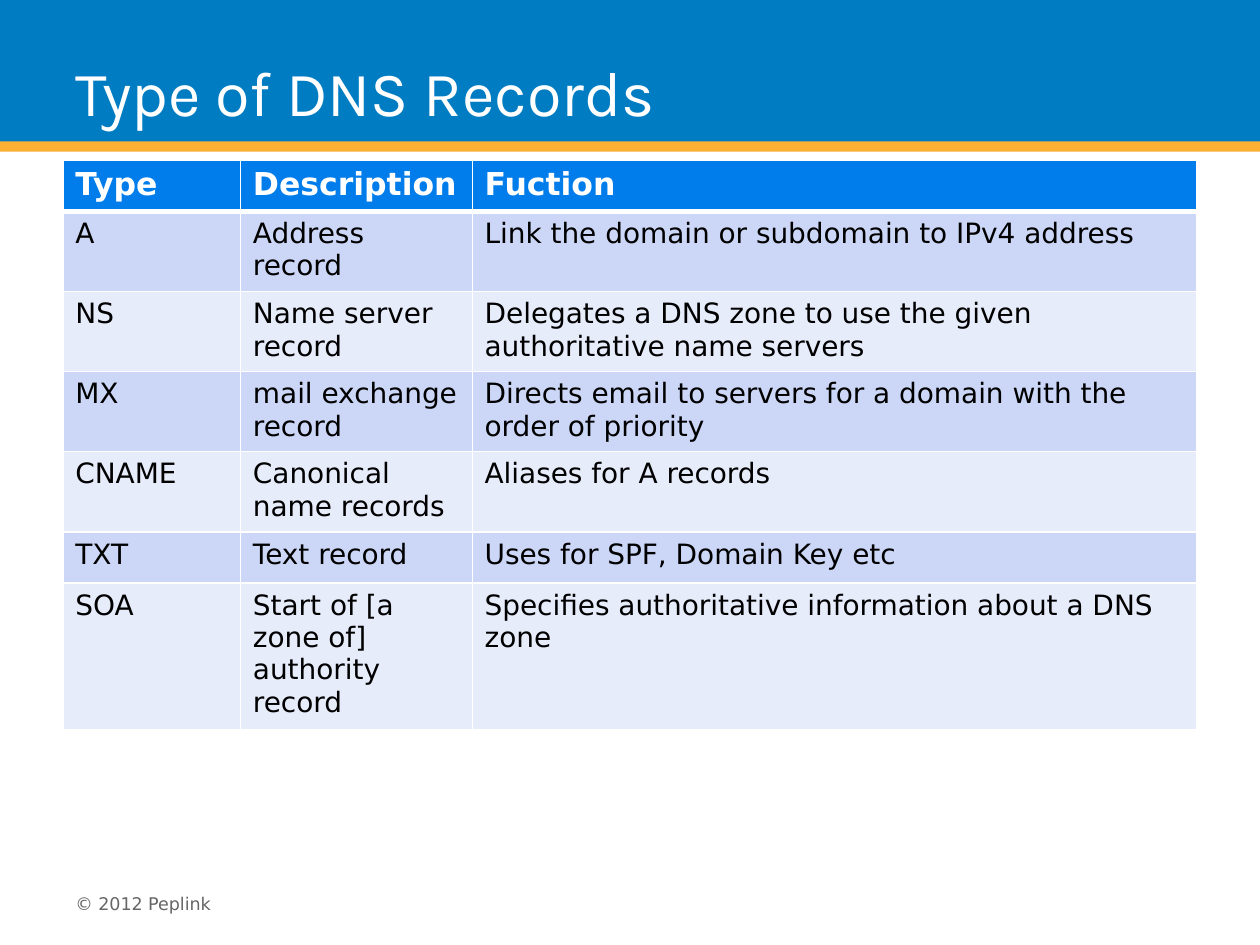
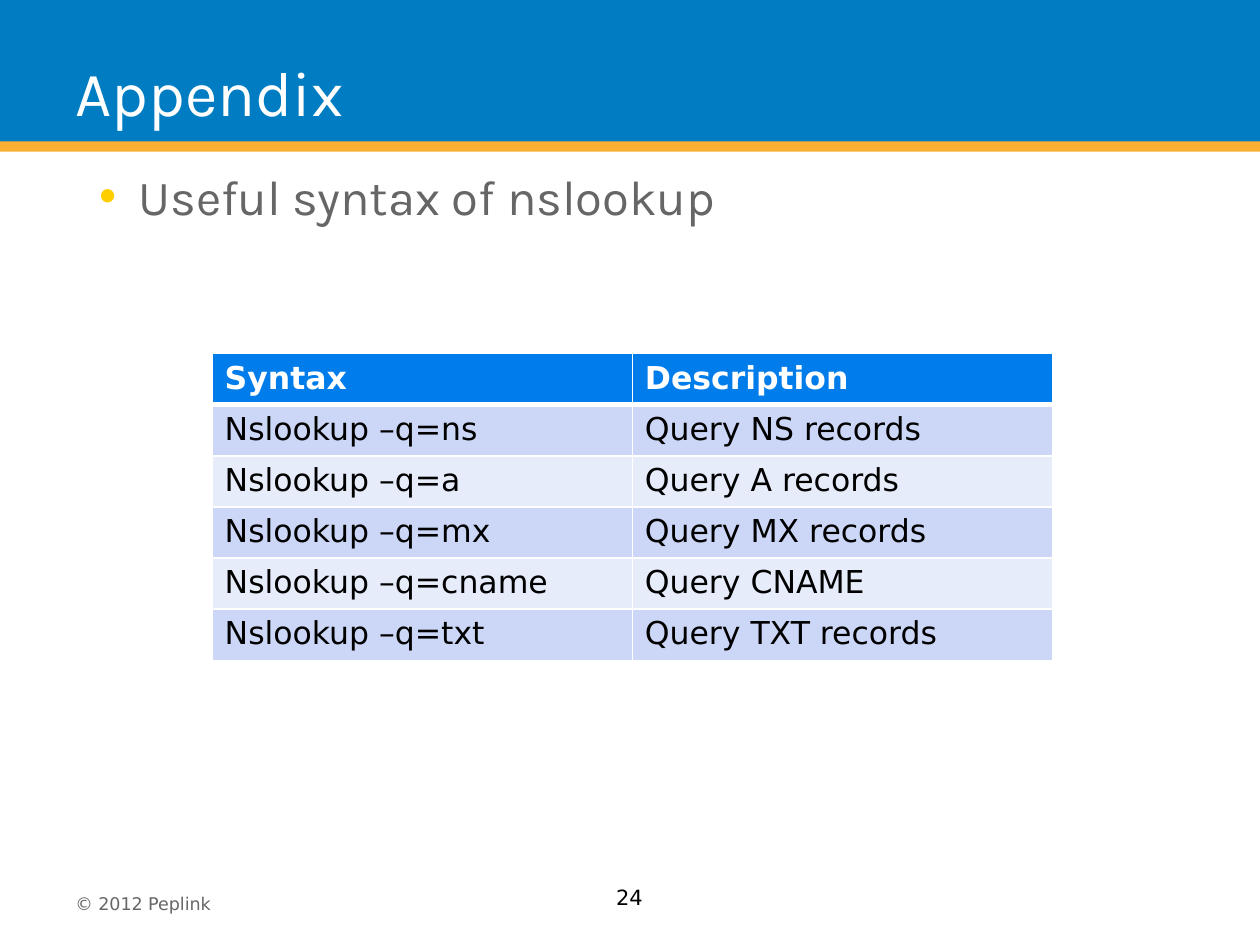
from lxml import etree
from pptx import Presentation
from pptx.dml.color import RGBColor
from pptx.enum.shapes import MSO_SHAPE
from pptx.enum.text import MSO_ANCHOR, MSO_AUTO_SIZE, PP_ALIGN
from pptx.oxml.ns import qn
from pptx.util import Cm, Pt

RECT = MSO_SHAPE.RECTANGLE
BOTTOM, MIDDLE, TOP = MSO_ANCHOR.BOTTOM, MSO_ANCHOR.MIDDLE, MSO_ANCHOR.TOP
LEFT, CENTER = PP_ALIGN.LEFT, PP_ALIGN.CENTER
NOFIT = MSO_AUTO_SIZE.NONE

# Shared look
BLUE, GOLD, GREY = "007DC2", "FBB034", "666666"
WHITE, BLACK, DOT = "FFFFFF", "000000", "FFCE00"
HEAD, BANDS = "007DEA", ["E7ECFB", "CCD7F7"]
SANS, KARLA = "DejaVu Sans", "Karla"

# Content
PAGES = [
    dict(title="Type of DNS Records", layout=5, left=1.27, top=3.23,
         cols=[3.58, 4.67, 14.61], size=16, rows=[
             ("Type", "Description", "Fuction"),
             ("A", "Address record",
              "Link the domain or subdomain to IPv4 address"),
             ("NS", "Name server record",
              "Delegates a DNS zone to use the given authoritative name servers"),
             ("MX", "mail exchange record",
              "Directs email to servers for a domain with the order of priority"),
             ("CNAME", "Canonical name records", "Aliases for A records"),
             ("TXT", "Text record", "Uses for SPF, Domain Key etc"),
             ("SOA", "Start of [a zone of] authority record",
              "Specifies authoritative information about a DNS zone"),
         ]),
    dict(title="Appendix", layout=1, left=4.28, top=7.13,
         cols=[8.47, 8.47], size=18, list="Useful syntax of nslookup",
         number="24", rows=[
             ("Syntax", "Description"),
             ("Nslookup –q=ns", "Query NS records"),
             ("Nslookup –q=a", "Query A records"),
             ("Nslookup –q=mx", "Query MX records"),
             ("Nslookup –q=cname", "Query CNAME"),
             ("Nslookup –q=txt", "Query TXT records"),
         ]),
]


def paint(part, color):
    """Give a fill or a font a solid hex colour."""
    if hasattr(part, "solid"):
        part.solid()
        part.fore_color.rgb = RGBColor.from_string(color)
    else:
        part.color.rgb = RGBColor.from_string(color)


def write(frame, text, size, color, font=SANS, bold=False,
          anchor=TOP, align=LEFT, pad=(0.25, 0.13)):
    """Fill a text frame or a cell's frame with one styled paragraph."""
    frame.text = text
    frame.word_wrap = True
    frame.vertical_anchor = anchor
    frame.margin_left = frame.margin_right = Cm(pad[0])
    frame.margin_top = frame.margin_bottom = Cm(pad[1])
    para = frame.paragraphs[0]
    para.alignment = align
    for run in para.runs:
        run.font.name, run.font.size, run.font.bold = font, Pt(size), bold
        paint(run.font, color)
    return para


deck = Presentation()
deck.slide_width, deck.slide_height = Cm(25.4), Cm(19.05)

for page in PAGES:
    slide = deck.slides.add_slide(deck.slide_layouts[page["layout"]])
    shapes = slide.shapes

    # Title band
    title = shapes.title
    title.left, title.top = Cm(0), Cm(0)
    title.width, title.height = deck.slide_width, Cm(2.85)
    paint(title.fill, BLUE)
    write(title.text_frame, page["title"], 36, WHITE, KARLA,
          anchor=BOTTOM, pad=(1.52, 0.25))
    title.text_frame.auto_size = NOFIT

    # Gold bar behind the title band
    bar = shapes.add_shape(RECT, 0, Cm(2.77), deck.slide_width, Cm(0.29))
    bar.shadow.inherit = False
    paint(bar.fill, GOLD)
    bar.line.fill.background()
    title.element.addprevious(bar.element)

    # Footer and page number
    foot = shapes.add_textbox(Cm(1.27), Cm(18), Cm(4.88), Cm(0.43))
    write(foot.text_frame, "© 2012 Peplink", 10, GREY,
          anchor=BOTTOM, pad=(0.25, 0))
    if "number" in page:
        box = shapes.add_textbox(Cm(9.73), Cm(17.58), Cm(5.92), Cm(1.02))
        write(box.text_frame, page["number"], 12, BLACK,
              anchor=MIDDLE, align=CENTER)

    # Bullet list
    if "list" in page:
        body = slide.placeholders[1]
        body.left, body.top = Cm(1.27), Cm(3.23)
        body.width, body.height = Cm(22.86), Cm(13.94)
        para = write(body.text_frame, page["list"], 28, GREY, KARLA,
                     pad=(0.25, 0))
        body.text_frame.auto_size = NOFIT
        props = para._p.get_or_add_pPr()
        props.set("marL", str(Cm(1.27)))
        props.set("indent", str(Cm(-0.79)))
        tint = etree.SubElement(props, qn("a:buClr"))
        etree.SubElement(tint, qn("a:srgbClr"), val=DOT)
        etree.SubElement(props, qn("a:buChar"), char="•")
        para.line_spacing, para.space_before = 1.1, Pt(0)

    # Record table
    rows, cols = page["rows"], page["cols"]
    grid = shapes.add_table(len(rows), len(cols), Cm(page["left"]),
                            Cm(page["top"]), Cm(sum(cols)),
                            Cm(1.03 * len(rows))).table
    for col, width in zip(grid.columns, cols):
        col.width = Cm(width)
    for r, row in enumerate(rows):
        grid.rows[r].height = Cm(1.03)
        for c, text in enumerate(row):
            cell = grid.cell(r, c)
            top = r == 0
            write(cell.text_frame, text, 18 if top else page["size"],
                  WHITE if top else BLACK, bold=top)
            cell.margin_left = cell.margin_right = Cm(0.25)
            cell.margin_top = cell.margin_bottom = Cm(0.13)
            paint(cell.fill, HEAD if top else BANDS[r % 2])
            # White borders, thick under the header
            props = cell._tc.get_or_add_tcPr()
            thick = {0: "lnB", 1: "lnT"}.get(r)
            for i, side in enumerate(("lnL", "lnR", "lnT", "lnB")):
                line = etree.Element(qn("a:" + side),
                                     w=str(Pt(3 if side == thick else 1)))
                fill = etree.SubElement(line, qn("a:solidFill"))
                etree.SubElement(fill, qn("a:srgbClr"), val=WHITE)
                props.insert(i, line)

deck.save("out.pptx")
